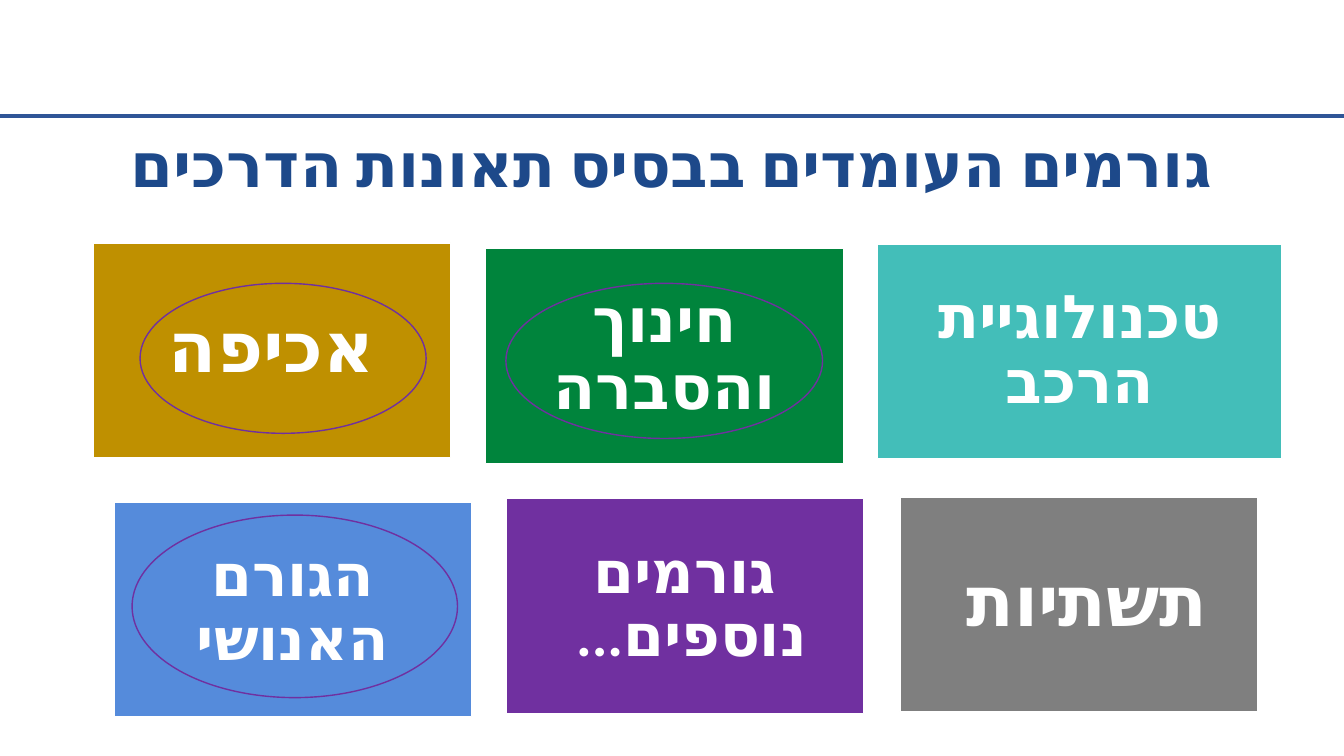
from lxml.etree import SubElement
from pptx import Presentation
from pptx.dml.color import RGBColor
from pptx.enum.shapes import MSO_CONNECTOR, MSO_SHAPE
from pptx.enum.text import MSO_ANCHOR, PP_ALIGN
from pptx.oxml.ns import qn
from pptx.util import Cm, Pt

WHITE = RGBColor(0xFF, 0xFF, 0xFF)
NAVY = RGBColor(0x1D, 0x49, 0x8A)
RULE_BLUE = RGBColor(0x2F, 0x55, 0x97)
GOLD = RGBColor(0xBF, 0x90, 0x00)
GREEN = RGBColor(0x00, 0x84, 0x3C)
TEAL = RGBColor(0x43, 0xBE, 0xB9)
PURPLE = RGBColor(0x70, 0x30, 0xA0)
GRAY = RGBColor(0x7F, 0x7F, 0x7F)
LIGHT_BLUE = RGBColor(0x55, 0x8B, 0xDB)
FONT_NAME = "Calibri"


def write_hebrew(text_frame, text, size, color, line_spacing):
    text_frame.text = text
    text_frame.word_wrap = True
    paragraph = text_frame.paragraphs[0]
    paragraph.alignment = PP_ALIGN.CENTER
    paragraph.line_spacing = line_spacing
    paragraph._p.get_or_add_pPr().set("rtl", "1")
    run = paragraph.runs[0]
    run.font.size = Pt(size)
    run.font.bold = True
    run.font.name = FONT_NAME
    run.font.color.rgb = color
    run_properties = run._r.get_or_add_rPr()
    run_properties.set("lang", "he-IL")
    SubElement(run_properties, qn("a:cs")).set("typeface", FONT_NAME)


presentation = Presentation()
presentation.slide_width = Cm(33.87)
presentation.slide_height = Cm(19.05)
slide = presentation.slides.add_slide(presentation.slide_layouts[5])

rule = slide.shapes.add_connector(
    MSO_CONNECTOR.STRAIGHT, Cm(33.87), Cm(2.92), Cm(0), Cm(2.92))
rule.line.color.rgb = RULE_BLUE
rule.line.width = Pt(3)
SubElement(rule._element.spPr, qn("a:effectLst"))

title = slide.shapes.title
title.left, title.top, title.width, title.height = Cm(2.82), Cm(3.33), Cm(28.22), Cm(4.19)
title.text_frame.vertical_anchor = MSO_ANCHOR.TOP
write_hebrew(title.text_frame, "גורמים העומדים בבסיס תאונות הדרכים", 44, NAVY, 0.85)

factors = [
    ("אכיפה", 2.34, 6.12, 9.02, GOLD, 50, 0.53),
    ("חינוך והסברה", 12.24, 6.27, 9.02, GREEN, 44, 0.46),
    ("טכנולוגיית הרכב", 22.12, 6.15, 10.19, TEAL, 43, 0.46),
    ("גורמים נוספים... ", 12.75, 12.57, 9.02, PURPLE, 42, 0.43),
    ("תשתיות ", 22.68, 12.52, 9.02, GRAY, 50, 0.53),
    ("הגורם האנושי", 2.87, 12.65, 9.02, LIGHT_BLUE, 42, 0.43),
]
for text, left, top, width, color, size, margin in factors:
    box = slide.shapes.add_shape(
        MSO_SHAPE.RECTANGLE, Cm(left), Cm(top), Cm(width), Cm(5.41))
    box.shadow.inherit = False
    box.fill.solid()
    box.fill.fore_color.rgb = color
    box.line.color.rgb = WHITE
    box.line.width = Pt(1)
    text_frame = box.text_frame
    text_frame.vertical_anchor = MSO_ANCHOR.MIDDLE
    text_frame.margin_left = text_frame.margin_right = Cm(margin)
    text_frame.margin_top = text_frame.margin_bottom = Cm(margin)
    write_hebrew(text_frame, text, size, WHITE, 0.9)

highlights = [
    (3.33, 12.98, 8.2, 4.6),
    (3.53, 7.14, 7.21, 3.78),
    (12.75, 7.14, 7.98, 3.91),
]
for left, top, width, height in highlights:
    ellipse = slide.shapes.add_shape(
        MSO_SHAPE.OVAL, Cm(left), Cm(top), Cm(width), Cm(height))
    ellipse.shadow.inherit = False
    ellipse.fill.background()
    ellipse.line.color.rgb = PURPLE
    ellipse.line.width = Pt(1)

presentation.save("out.pptx")
